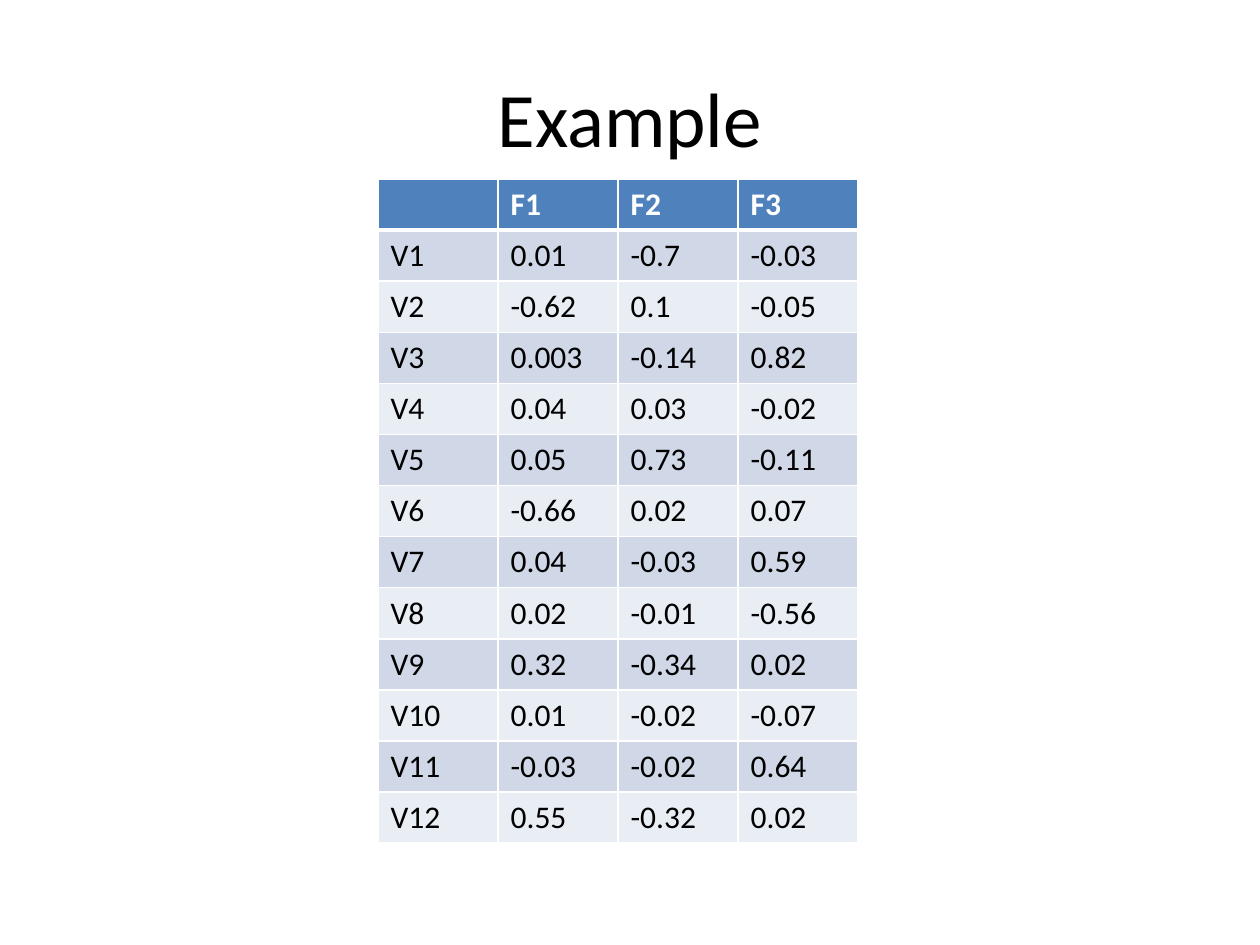
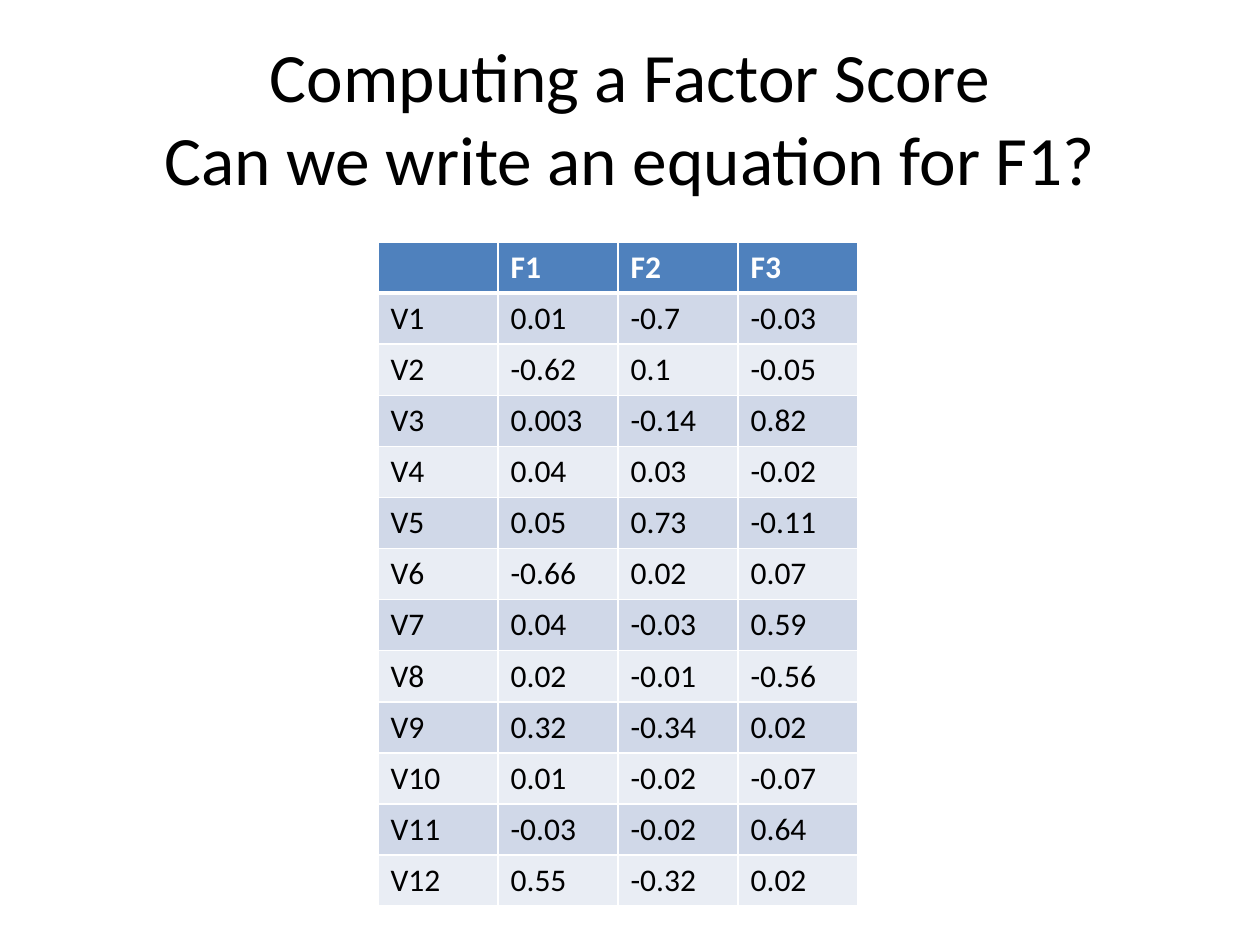
import pptx
import pptx.util
import pptx.dml.color
import pptx.enum.text
import pptx.oxml.ns
from lxml import etree

PX = 914400 / 126
FONT = "Calibri"
HUES = {"ink": "000000", "paper": "FFFFFF", "head": "4F81BD",
        "odd": "D0D8E8", "even": "E9EDF4"}
TITLE = {"left": 63, "top": 38, "width": 1134, "height": 157}
LEFT, COL, ROW = 378, 120, 51

LOADS = [
    ("", "F1", "F2", "F3"),
    ("V1", "0.01", "-0.7", "-0.03"),
    ("V2", "-0.62", "0.1", "-0.05"),
    ("V3", "0.003", "-0.14", "0.82"),
    ("V4", "0.04", "0.03", "-0.02"),
    ("V5", "0.05", "0.73", "-0.11"),
    ("V6", "-0.66", "0.02", "0.07"),
    ("V7", "0.04", "-0.03", "0.59"),
    ("V8", "0.02", "-0.01", "-0.56"),
    ("V9", "0.32", "-0.34", "0.02"),
    ("V10", "0.01", "-0.02", "-0.07"),
    ("V11", "-0.03", "-0.02", "0.64"),
    ("V12", "0.55", "-0.32", "0.02"),
]


def emu(px):
    return pptx.util.Emu(round(px * PX))


def color(key):
    return pptx.dml.color.RGBColor.from_string(HUES[key])


def tag(name):
    return pptx.oxml.ns.qn("a:" + name)


def apply(item, style):
    for key, value in style.items():
        setattr(item, key, value)


def ink(para, size, hue, bold=False):
    for run in para.runs:
        apply(run.font, {"name": FONT, "size": pptx.util.Pt(size), "bold": bold})
        run.font.color.rgb = color(hue)


def add_title(slide, text, size):
    title = slide.shapes.title
    apply(title, {key: emu(px) for key, px in TITLE.items()})
    frame = title.text_frame
    frame.text = text
    apply(frame, {"word_wrap": True,
                  "auto_size": pptx.enum.text.MSO_AUTO_SIZE.NONE,
                  "vertical_anchor": pptx.enum.text.MSO_ANCHOR.MIDDLE})
    para = frame.paragraphs[0]
    para.alignment = pptx.enum.text.PP_ALIGN.CENTER
    ink(para, size, "ink")
    for gap in para._p.findall(tag("br")):
        etree.SubElement(gap, tag("rPr"), sz=str(round(size * 100)))


def add_edge(cell, side, width):
    props = cell._tc.get_or_add_tcPr()
    line = etree.SubElement(props, tag("ln" + side), w=str(pptx.util.Pt(width)))
    fill = etree.SubElement(line, tag("solidFill"))
    etree.SubElement(fill, tag("srgbClr"), val=HUES["paper"])


def set_cell(cell, text, row):
    head = row == 0
    thick = {"B": 3} if head else {"T": 3} if row == 1 else {}
    for side in "LRTB":
        add_edge(cell, side, thick.get(side, 1))
    cell.fill.solid()
    cell.fill.fore_color.rgb = color("head" if head else "odd" if row % 2 else "even")
    cell.text = text
    ink(cell.text_frame.paragraphs[0], 18, "paper" if head else "ink", head)


def add_loads(slide, top):
    rows, cols = len(LOADS), len(LOADS[0])
    grid = slide.shapes.add_table(rows, cols, emu(LEFT), emu(top),
                                  emu(COL * cols), emu(ROW * rows)).table
    for col in grid.columns:
        col.width = emu(COL)
    for row, texts in enumerate(LOADS):
        grid.rows[row].height = emu(ROW)
        for col, text in enumerate(texts):
            set_cell(grid.cell(row, col), text, row)


def add_page(deck, text, size, top):
    slide = deck.slides.add_slide(deck.slide_layouts[5])
    add_title(slide, text, size)
    add_loads(slide, top)


def main():
    deck = pptx.Presentation()
    apply(deck, {"slide_width": emu(1260), "slide_height": emu(945)})
    add_page(deck, "Example", 44, 179)
    add_page(deck, "Computing a Factor Score\vCan we write an equation for F1?", 39.6, 242)
    deck.save("out.pptx")


if __name__ == "__main__":
    main()
